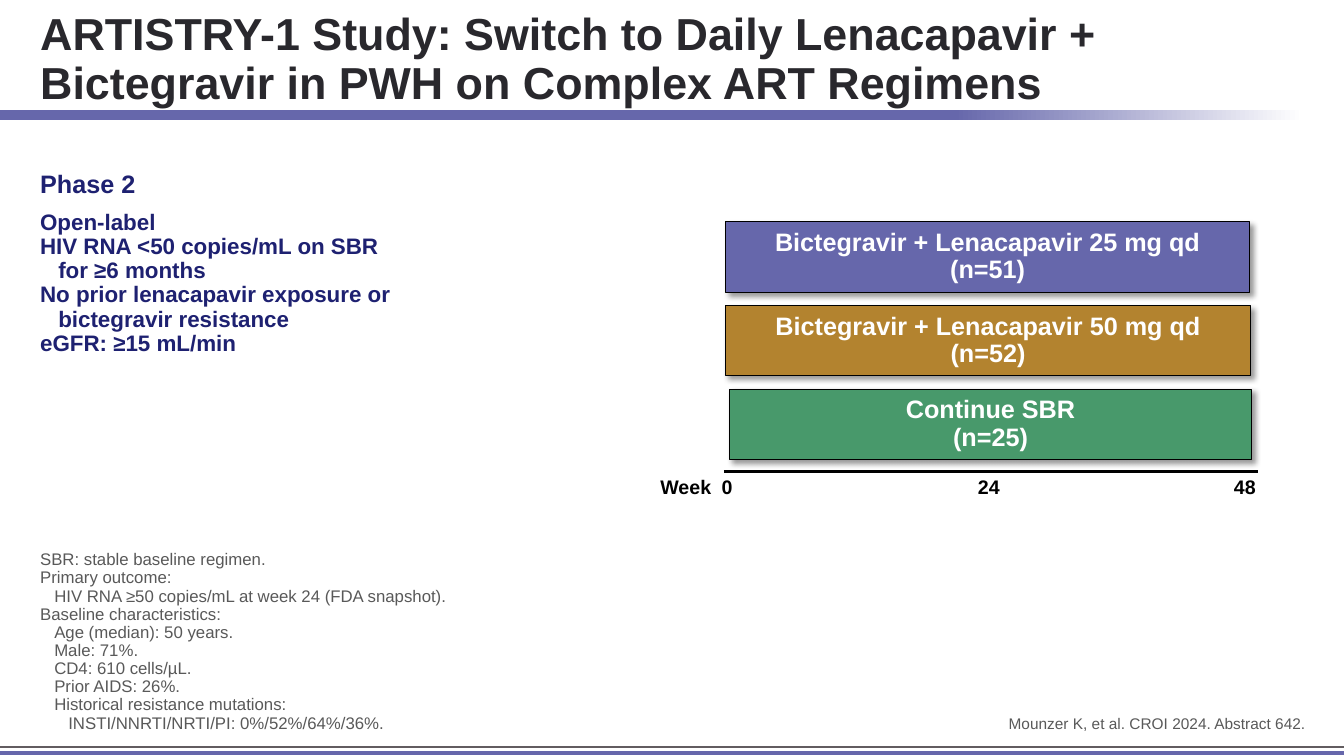
from dataclasses import dataclass

from lxml.etree import SubElement
from pptx import Presentation
from pptx.dml.color import RGBColor
from pptx.enum.shapes import MSO_CONNECTOR as Connector, MSO_SHAPE as Shape
from pptx.enum.text import MSO_ANCHOR as Anchor, PP_ALIGN as Align
from pptx.oxml.ns import qn
from pptx.util import Pt

EMU_PER_PX = 9144  # 100 px to the inch
SLIDE_WIDTH, SLIDE_HEIGHT = 1333, 750
PURPLE, NAVY, BLACK, WHITE, GREY = "6667AB", "1E2171", "000000", "FFFFFF", "595959"


@dataclass
class Line:
    text: str
    size: int = 0  # 0 keeps the size of the text block
    indent: int = 0
    before: int = 0
    after: int = 0


@dataclass
class Block:
    left: int
    top: int
    width: int
    height: int
    lines: list[Line]
    size: int
    color: str
    bold: bool = False
    align: Align = Align.LEFT
    anchor: Anchor = Anchor.TOP


@dataclass
class Arm:
    left: int
    width: int
    name: str
    count: int
    color: str


@dataclass
class Rule:
    left: int
    right: int
    y: int
    color: str
    weight: float


def px(length: int) -> int:
    return length * EMU_PER_PX


def rgb(color: str) -> RGBColor:
    return RGBColor.from_string(color)


def set_values(target, values: dict) -> None:
    for name, value in values.items():
        setattr(target, name, value)


def write_lines(frame, block: Block) -> None:
    set_values(frame, {"word_wrap": True, "vertical_anchor": block.anchor})
    for index, line in enumerate(block.lines):
        para = frame.add_paragraph() if index else frame.paragraphs[0]
        set_values(para, {
            "alignment": block.align,
            "line_spacing": 0.9,
            "space_before": Pt(line.before),
            "space_after": Pt(line.after),
        })
        if line.indent:
            para._p.get_or_add_pPr().set("marL", str(px(line.indent)))
        span = para.add_run()
        span.text = line.text
        set_values(span.font, {
            "name": "Arial", "size": Pt(line.size or block.size), "bold": block.bold,
        })
        span.font.color.rgb = rgb(block.color)


def draw_block(page, block: Block):
    box = page.shapes.add_textbox(
        px(block.left), px(block.top), px(block.width), px(block.height))
    write_lines(box.text_frame, block)
    return box


def draw_rule(page, rule: Rule) -> None:
    line = page.shapes.add_connector(
        Connector.STRAIGHT, px(rule.left), px(rule.y), px(rule.right), px(rule.y))
    line.line.color.rgb = rgb(rule.color)
    line.line.width = Pt(rule.weight)
    SubElement(line._element.spPr, qn("a:effectLst"))


def draw_title_bar(page) -> None:
    bar = page.shapes.add_shape(Shape.RECTANGLE, 0, px(109), px(SLIDE_WIDTH), px(10))
    bar.shadow.inherit = False
    bar.line.fill.background()
    bar.fill.gradient()
    bar.fill.gradient_angle = 180
    for stop, (position, color) in zip(bar.fill.gradient_stops,
                                       [(0.03, WHITE), (0.29, PURPLE)]):
        stop.position = position
        stop.color.rgb = rgb(color)


def add_soft_shadow(box) -> None:
    box.shadow.inherit = False
    effects = box._element.spPr.find(qn("a:effectLst"))
    shadow = SubElement(effects, qn("a:outerShdw"), blurRad=str(Pt(4)),
                        dist=str(Pt(3)), dir="2700000", algn="tl", rotWithShape="0")
    shade = SubElement(shadow, qn("a:srgbClr"), val=BLACK)
    SubElement(shade, qn("a:alpha"), val="40000")


def draw_arm(page, arm: Arm, top: int) -> None:
    block = Block(arm.left, top, arm.width, 70,
                  [Line(arm.name), Line(f"(n={arm.count})")],
                  18, WHITE, True, Align.CENTER, Anchor.MIDDLE)
    box = page.shapes.add_shape(
        Shape.RECTANGLE, px(block.left), px(top), px(block.width), px(block.height))
    box.fill.solid()
    box.fill.fore_color.rgb = rgb(arm.color)
    box.line.color.rgb = rgb(BLACK)
    box.line.width = Pt(0.75)
    add_soft_shadow(box)
    write_lines(box.text_frame, block)


def draw_week_labels(page) -> None:
    box = draw_block(page, Block(645, 469, 642, 31, [Line("Week\t0\t24\t48")],
                                 14, BLACK, True))
    properties = box.text_frame.paragraphs[0]._p.get_or_add_pPr()
    tabs = SubElement(properties, qn("a:tabLst"))
    for step in range(3):
        SubElement(tabs, qn("a:tab"), pos=str(px(61 + 254 * step)), algn="l")


TITLE = Block(30, 21, 1282, 92, [
    Line("ARTISTRY-1 Study: Switch to Daily Lenacapavir + "
         "Bictegravir in PWH on Complex ART Regimens"),
], 32, "29282D", True, anchor=Anchor.BOTTOM)

DESIGN = Block(30, 165, 464, 195, [
    Line("Phase 2", size=18, after=3),
    Line("Open-label", before=6),
    Line("HIV RNA <50 copies/mL on SBR"),
    Line("for ≥6 months", indent=18),
    Line("No prior lenacapavir exposure or"),
    Line("bictegravir resistance", indent=18),
    Line("eGFR: ≥15 mL/min"),
], 16, NAVY, True)

NOTES = Block(30, 542, 553, 192, [
    Line("SBR: stable baseline regimen."),
    Line("Primary outcome:"),
    Line("HIV RNA ≥50 copies/mL at week 24 (FDA snapshot).", indent=14),
    Line("Baseline characteristics:"),
    Line("Age (median): 50 years.", indent=14),
    Line("Male: 71%.", indent=14),
    Line("CD4: 610 cells/µL.", indent=14),
    Line("Prior AIDS: 26%.", indent=14),
    Line("Historical resistance mutations:", indent=14),
    Line("INSTI/NNRTI/NRTI/PI: 0%/52%/64%/36%.", indent=28),
], 12, GREY)

CITATION = Block(667, 706, 638, 27, [Line("Mounzer K, et al. CROI 2024. Abstract 642.")],
                 11, GREY, align=Align.RIGHT)

ARMS = [
    Arm(720, 519, "Bictegravir + Lenacapavir 25 mg qd", 51, PURPLE),
    Arm(720, 520, "Bictegravir + Lenacapavir 50 mg qd", 52, "B3832F"),
    Arm(724, 517, "Continue SBR", 25, "48996B"),
]

RULES = [
    Rule(0, SLIDE_WIDTH, 741, "625C60", 1.75),
    Rule(0, SLIDE_WIDTH, 747, PURPLE, 3.25),
    Rule(718, 1248, 468, BLACK, 2),  # week axis
]


def main() -> None:
    deck = Presentation()
    set_values(deck, {"slide_width": px(SLIDE_WIDTH), "slide_height": px(SLIDE_HEIGHT)})
    page = deck.slides.add_slide(deck.slide_layouts[6])

    # Title bar, footer rules and week axis
    draw_title_bar(page)
    for rule in RULES:
        draw_rule(page, rule)

    # Title, study design, notes and citation
    for block in (TITLE, DESIGN, NOTES, CITATION):
        draw_block(page, block)

    # Treatment arms over the week axis
    for index, arm in enumerate(ARMS):
        draw_arm(page, arm, 220 + 83 * index)
    draw_week_labels(page)

    deck.save("out.pptx")


if __name__ == "__main__":
    main()
